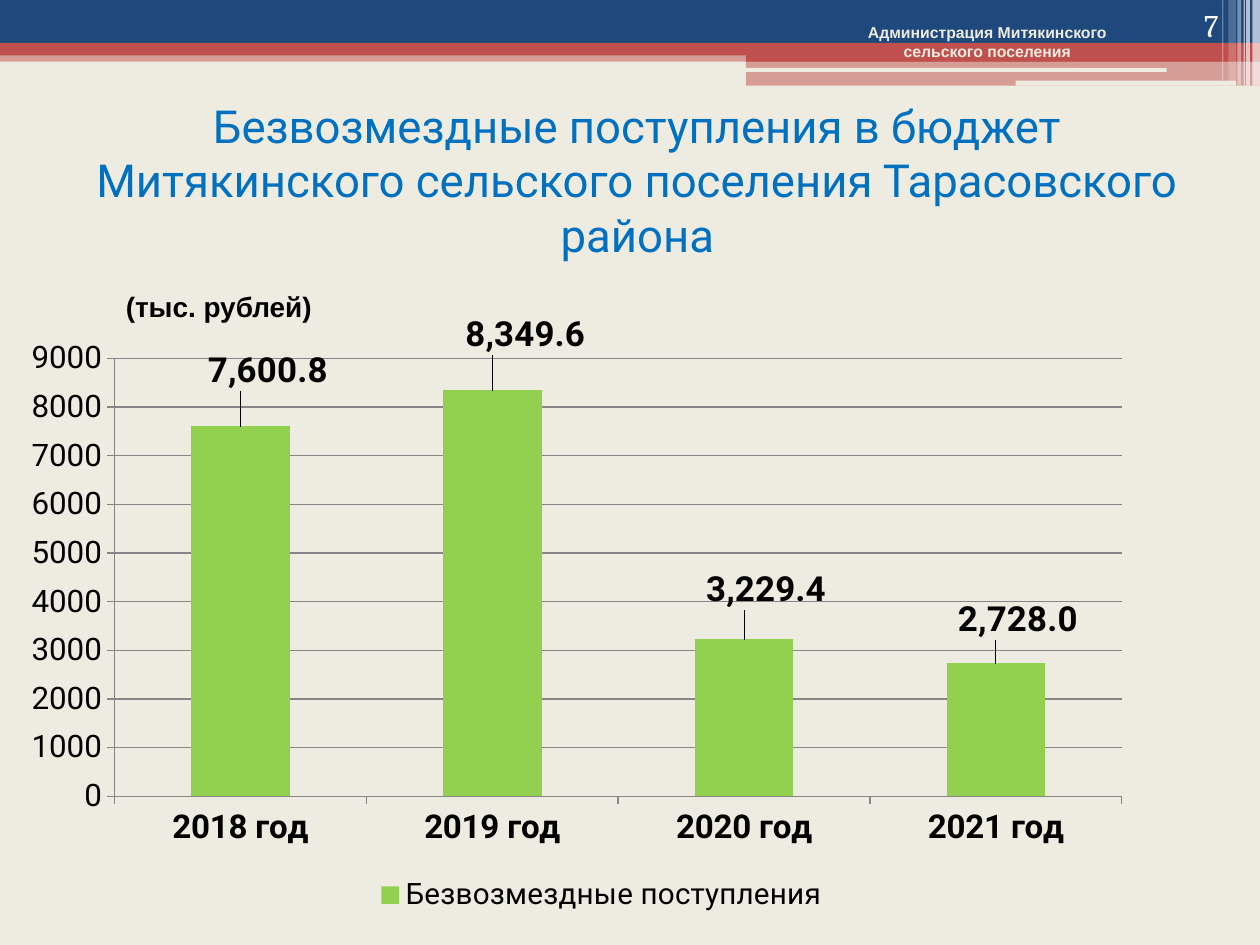
from lxml import etree
from pptx import Presentation
from pptx import util as u
from pptx.chart.data import CategoryChartData
from pptx.dml.color import RGBColor
from pptx.enum import chart as charts, shapes, text
from pptx.oxml.ns import qn

COLUMNS, ROWS = 1000, 750
SLIDE_WIDTH, SLIDE_HEIGHT = u.Inches(10), u.Inches(7.5)

CREAM = RGBColor(0xEE, 0xEC, 0xE1)
NAVY = RGBColor(0x1F, 0x49, 0x7D)
RED = RGBColor(0xC0, 0x50, 0x4D)
WHITE = RGBColor(0xFF, 0xFF, 0xFF)
BLACK = RGBColor(0, 0, 0)
BLUE = RGBColor(0x00, 0x70, 0xC0)
GREEN = RGBColor(0x92, 0xD0, 0x50)
GRAY = RGBColor(0x86, 0x86, 0x86)

RECTANGLE = shapes.MSO_SHAPE.RECTANGLE
ROUNDED = shapes.MSO_SHAPE.ROUNDED_RECTANGLE
CENTER = text.PP_ALIGN.CENTER

# left, top, width, height inside the header, fill, opacity %, preset
BANDS = [
    (0, 40, 1000, 9, RED, 50, RECTANGLE),
    (0, 0, 1000, 34, NAVY, 100, RECTANGLE),
    (0, 34, 1000, 10, RED, 100, RECTANGLE),
    (592, 39, 408, 10, RED, 100, RECTANGLE),
    (592, 48, 408, 20, RED, 50, RECTANGLE),
    (591, 54, 335, 3, CREAM, 100, ROUNDED),
    (806, 64, 175, 4, CREAM, 100, ROUNDED),
]
# left, width, height, opacity %
STRIPES = [(994, 6, 68, 65), (989, 3, 68, 65), (987, 1, 68, 60),
           (982, 3, 68, 40), (975, 6, 64, 20), (970, 1, 64, 30)]

INCOME = {"2018 год": 7600.8, "2019 год": 8349.6,
          "2020 год": 3229.4, "2021 год": 2728.0}
NUMBER_FORMAT = "#,##0.0"
LABEL_SHIFTS = [(0.025, -0.05), (0.03, -0.05), (0.02, -0.04), (0.02, -0.03)]


def grid(box, left=0, top=0, width=None, height=None):
    """Turn grid columns and rows inside a box into slide lengths."""
    column, row = SLIDE_WIDTH / COLUMNS, SLIDE_HEIGHT / ROWS
    width = box[2] if width is None else width
    height = box[3] if height is None else height
    return (round((box[0] + left) * column), round((box[1] + top) * row),
            round(width * column), round(height * row))


def set_font(font, size, name, color=BLACK, bold=False):
    font.size, font.name, font.bold = u.Pt(size), name, bold
    font.color.rgb = color


def write(frame, lines, align=text.PP_ALIGN.LEFT, anchor=text.MSO_ANCHOR.TOP, **font):
    frame.word_wrap = True
    frame.auto_size = text.MSO_AUTO_SIZE.NONE
    frame.vertical_anchor = anchor
    for index, line in enumerate(lines):
        paragraph = frame.add_paragraph() if index else frame.paragraphs[0]
        paragraph.text = line
        paragraph.alignment = align
        for run in paragraph.runs:
            set_font(run.font, **font)


def add_text(slide, box, lines, **style):
    write(slide.shapes.add_textbox(*grid(box)).text_frame, lines, **style)


def add_band(slide, place, color, opacity, preset):
    shape = slide.shapes.add_shape(preset, *place)
    shape.shadow.inherit = False
    shape.fill.solid()
    shape.fill.fore_color.rgb = color
    shape.line.fill.background()
    if opacity < 100:
        fill = shape.element.spPr.find(qn("a:solidFill"))
        etree.SubElement(fill[0], qn("a:alpha"), val=str(opacity * 1000))


def add_header(slide, box):
    for *place, color, opacity, preset in BANDS:
        add_band(slide, grid(box, *place), color, opacity, preset)
    for left, width, height, opacity in STRIPES:
        add_band(slide, grid(box, left, 0, width, height), WHITE, opacity, RECTANGLE)


def add_title(slide, box):
    title = slide.shapes.title
    title.left, title.top, title.width, title.height = grid(box)
    write(title.text_frame,
          ["Безвозмездные поступления в бюджет\v"
           "Митякинского сельского поселения Тарасовского района"],
          align=CENTER, anchor=text.MSO_ANCHOR.MIDDLE,
          size=26, name="Roboto", color=BLUE)


def make_layout(**values):
    """Build a manual chart layout from shares of the chart."""
    layout = etree.Element(qn("c:layout"))
    manual = etree.SubElement(layout, qn("c:manualLayout"))
    for name, value in values.items():
        etree.SubElement(manual, qn(f"c:{name}"), val=str(value))
    return layout


def format_axis(axis, size, bold=False):
    axis.major_tick_mark = charts.XL_TICK_MARK.OUTSIDE
    axis.minor_tick_mark = charts.XL_TICK_MARK.NONE
    axis.format.line.color.rgb = GRAY
    set_font(axis.tick_labels.font, size, "Roboto", bold=bold)


def add_labels(plot, series):
    plot.has_data_labels = True
    labels = plot.data_labels
    labels.show_value = True
    labels.number_format, labels.number_format_is_linked = NUMBER_FORMAT, False
    set_font(labels.font, 20, "Roboto", bold=True)
    for index in range(len(LABEL_SHIFTS)):
        label = series.points[index].data_label
        set_font(label.font, 20, "Roboto", bold=True)
        label.position = charts.XL_LABEL_POSITION.OUTSIDE_END
    for element, (x, y) in zip(plot._element.iter(qn("c:dLbl")), LABEL_SHIFTS):
        number = etree.Element(qn("c:numFmt"), formatCode=NUMBER_FORMAT, sourceLinked="0")
        index = element.find(qn("c:idx"))
        index.addnext(number)
        index.addnext(make_layout(x=x, y=y))


def add_income_chart(slide, box):
    data = CategoryChartData(number_format=NUMBER_FORMAT)
    data.categories = list(INCOME)
    data.add_series("Безвозмездные поступления", list(INCOME.values()))
    chart = slide.shapes.add_chart(
        charts.XL_CHART_TYPE.COLUMN_CLUSTERED, *grid(box), data).chart
    set_font(chart.font, 18, "Cambria")
    chart.has_title = False

    plot = chart.plots[0]
    plot.gap_width = 155
    plot.vary_by_categories = False
    series = plot.series[0]
    series.format.fill.solid()
    series.format.fill.fore_color.rgb = GREEN
    add_labels(plot, series)

    format_axis(chart.category_axis, 19, bold=True)
    values = chart.value_axis
    format_axis(values, 18)
    values.minimum_scale, values.maximum_scale, values.major_unit = 0, 9000, 1000
    values.has_major_gridlines = True
    values.major_gridlines.format.line.color.rgb = GRAY
    values.tick_labels.number_format = "General"
    values.tick_labels.number_format_is_linked = False

    chart.has_legend = True
    chart.legend.position = charts.XL_LEGEND_POSITION.RIGHT
    chart.legend.include_in_layout = False
    set_font(chart.legend.font, 17, "Roboto")

    legend = chart.element.find(".//" + qn("c:legend"))
    for old in legend.findall(qn("c:layout")):
        legend.remove(old)
    legend.find(qn("c:legendPos")).addnext(make_layout(
        xMode="edge", yMode="edge", x=0.3, y=0.92, w=0.42, h=0.07))
    area = chart.element.find(".//" + qn("c:plotArea"))
    for old in area.findall(qn("c:layout")):
        area.remove(old)
    area.insert(0, make_layout(layoutTarget="inner", xMode="edge", yMode="edge",
                               x=0.07, y=0.06, w=0.91, h=0.73))


def main():
    presentation = Presentation()
    presentation.slide_width, presentation.slide_height = SLIDE_WIDTH, SLIDE_HEIGHT
    slide = presentation.slides.add_slide(presentation.slide_layouts[5])
    slide.background.fill.solid()
    slide.background.fill.fore_color.rgb = CREAM

    add_header(slide, (0, 0, COLUMNS, 68))
    add_title(slide, (12, 84, 988, 117))
    add_text(slide, (90, 225, 181, 37), ["(тыс. рублей)"],
             size=16, name="Arial", bold=True)
    add_text(slide, (628, 13, 311, 40),
             ["Администрация Митякинского", "сельского поселения"],
             align=CENTER, size=9, name="Arial", color=CREAM, bold=True)
    add_income_chart(slide, (25, 249, 883, 483))
    add_text(slide, (894, 0, 83, 40), ["7"], align=text.PP_ALIGN.RIGHT,
             anchor=text.MSO_ANCHOR.BOTTOM, size=18, name="Cambria", color=WHITE)
    presentation.save("out.pptx")


if __name__ == "__main__":
    main()
